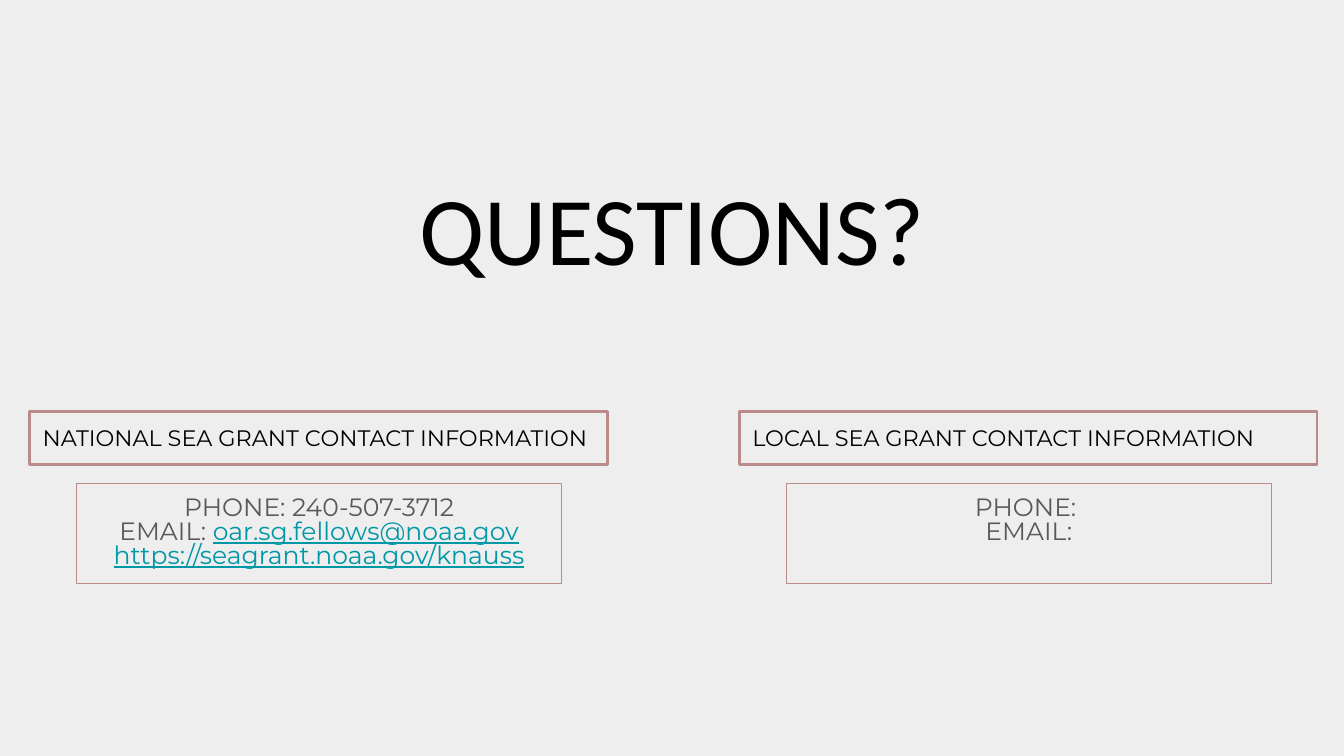
from dataclasses import dataclass
from pptx import Presentation
from pptx.dml.color import RGBColor
from pptx.enum.shapes import MSO_SHAPE
from pptx.enum.text import MSO_ANCHOR, PP_ALIGN
from pptx.util import Pt


@dataclass(frozen=True)
class Theme:
    back: str = "EEEEEE"
    ink: str = "000000"
    body: str = "595959"
    link: str = "0097A7"
    edge: str = "BB8A8A"
    title_font: str = "Calibri"
    text_font: str = "Montserrat"
    title_size: float = 52
    head_size: float = 12
    body_size: float = 13.4


THEME = Theme()


def set_frame(shape, anchor):
    frame = shape.text_frame
    frame.word_wrap = True
    frame.vertical_anchor = anchor
    frame.margin_left = frame.margin_right = Pt(7.2)
    frame.margin_top = frame.margin_bottom = Pt(7.2)
    return frame


def style(font, name, size, color):
    font.name = name
    font.size = Pt(size)
    font.color.rgb = RGBColor.from_string(color)


def add_title(slide, box, text):
    label = slide.shapes.add_textbox(*map(Pt, box))
    frame = set_frame(label, MSO_ANCHOR.BOTTOM)
    frame.text = text
    para = frame.paragraphs[0]
    para.alignment = PP_ALIGN.CENTER
    style(para.runs[0].font, THEME.title_font, THEME.title_size, THEME.ink)


def add_panel(slide, box, weight):
    panel = slide.shapes.add_shape(MSO_SHAPE.RECTANGLE, *map(Pt, box))
    panel.shadow.inherit = False
    panel.fill.background()
    panel.line.color.rgb = RGBColor.from_string(THEME.edge)
    panel.line.width = Pt(weight)
    return set_frame(panel, MSO_ANCHOR.TOP)


def add_contact(slide, box, inset, head, lines):
    left, top, width, height = box
    body_top = 38.9
    body_box = (left + inset, top + body_top, 259.9, height - body_top)
    frame = add_panel(slide, body_box, 0.75)
    for index, (label, link) in enumerate(lines):
        para = frame.paragraphs[0] if index == 0 else frame.add_paragraph()
        para.alignment = PP_ALIGN.CENTER
        para.line_spacing = 0.8
        for text, color in ((label, THEME.body), (link, THEME.link)):
            if text:
                run = para.add_run()
                run.text = text
                style(run.font, THEME.text_font, THEME.body_size, color)
                run.font.underline = color == THEME.link

    frame = add_panel(slide, (left, top, width, 28.8), 1.5)
    frame.text = head
    para = frame.paragraphs[0]
    para.alignment = PP_ALIGN.LEFT
    style(para.runs[0].font, THEME.text_font, THEME.head_size, THEME.ink)


def main():
    deck = Presentation()
    deck.slide_width, deck.slide_height = Pt(720), Pt(405)
    slide = deck.slides.add_slide(deck.slide_layouts[6])
    slide.background.fill.solid()
    slide.background.fill.fore_color.rgb = RGBColor.from_string(THEME.back)

    add_title(slide, (24.5, 58.3, 671, 101.5), "QUESTIONS?")
    contacts = [
        ("NATIONAL SEA GRANT CONTACT INFORMATION", [
            ("PHONE: 240-507-3712", ""),
            ("EMAIL: ", "oar.sg.fellows@noaa.gov"),
            ("", "https://seagrant.noaa.gov/knauss"),
        ]),
        ("LOCAL SEA GRANT CONTACT INFORMATION", [
            ("PHONE: ", ""),
            ("EMAIL:", ""),
        ]),
    ]
    for index, (head, lines) in enumerate(contacts):
        box = (15.8 + index * 380.2, 220.3, 309.6, 92.2)
        add_contact(slide, box, 25.2, head, lines)
    deck.save("out.pptx")


if __name__ == "__main__":
    main()
